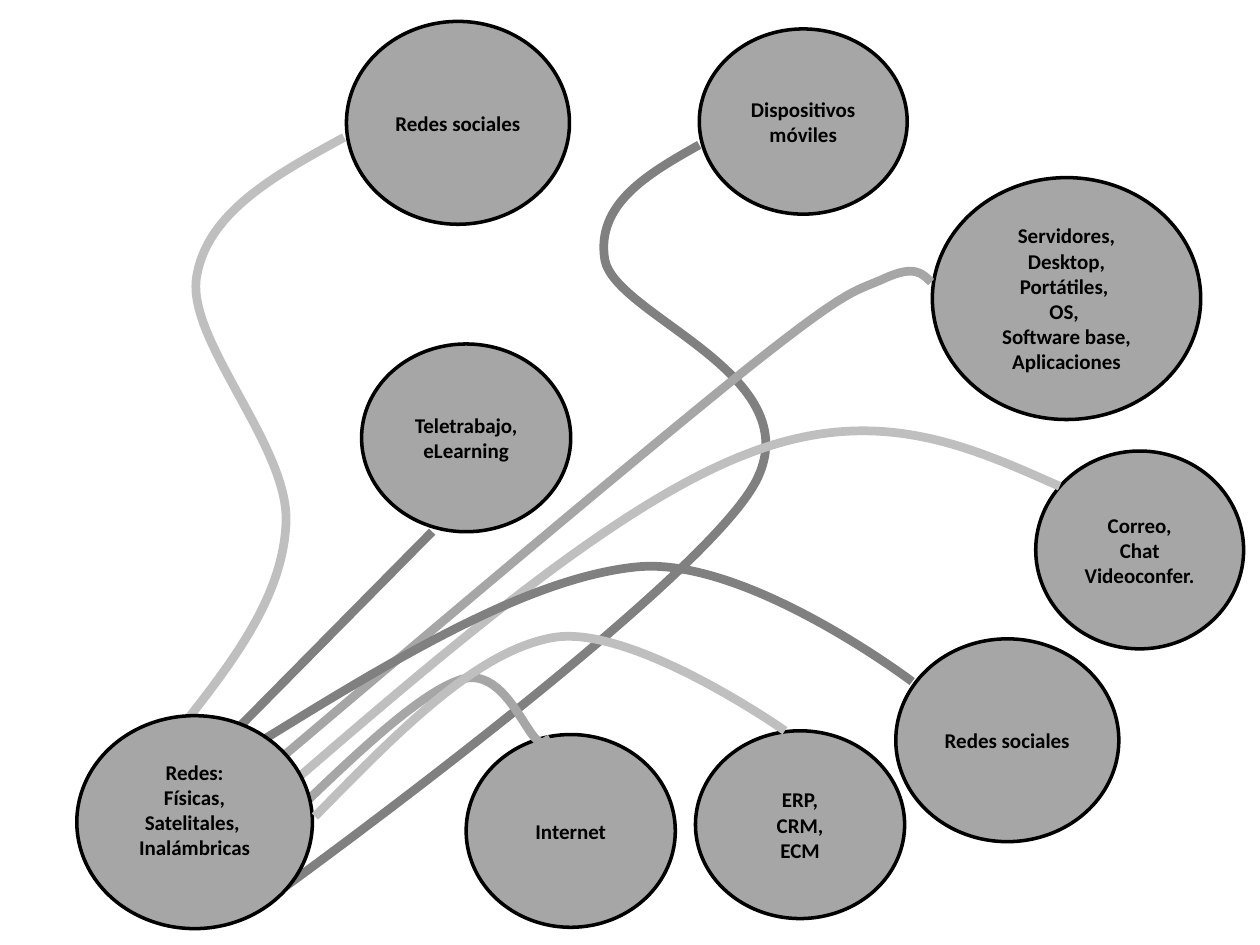
from lxml.etree import SubElement
from pptx import Presentation
from pptx.dml.color import RGBColor
from pptx.enum.shapes import MSO_SHAPE
from pptx.enum.text import MSO_ANCHOR, PP_ALIGN
from pptx.oxml.ns import qn
from pptx.util import Inches, Pt

presentation = Presentation()
presentation.slide_width, presentation.slide_height = Inches(10), Inches(7.5)
slide = presentation.slides.add_slide(presentation.slide_layouts[6])

# Grid of 1000 columns by 750 rows; cells are square
CELL = presentation.slide_width // 1000
DARK, MEDIUM, LIGHT = "808080", "A6A6A6", "BFBFBF"
STEPS = 40


def paint(color_format, hex_color):
    color_format.rgb = RGBColor.from_string(hex_color)


def bezier(points, t):
    """Point at t on the cubic curve through four control points."""
    weights = ((1 - t) ** 3, 3 * t * (1 - t) ** 2, 3 * t * t * (1 - t), t ** 3)
    return tuple(round(sum(w * p[axis] for w, p in zip(weights, points)))
                 for axis in (0, 1))


# Nodes: (left, top, width, height), paragraphs
# Links: colour, start point followed by three points per curve
# Listed from back to front
parts = [
    ((740, 141, 213, 192), ["Servidores, Desktop, Portátiles, ", "OS, ",
                            "Software base, Aplicaciones"]),
    ((822, 358, 165, 157), ["Correo,", "Chat", "Videoconfer."]),
    ((370, 583, 166, 153), ["Internet"]),
    ((287, 273, 166, 149), ["Teletrabajo,", "eLearning"]),
    ((555, 23, 165, 147), ["Dispositivos móviles"]),
    ((275, 17, 177, 161), ["Redes sociales"]),
    (DARK, [(179, 588), (179, 588), (343, 422), (343, 422)]),
    (DARK, [(555, 115), (514, 138), (473, 162), (480, 206),
            (488, 251), (644, 297), (600, 382),
            (556, 466), (215, 712), (215, 712)]),
    (MEDIUM, [(739, 224), (732, 217), (726, 210), (702, 221),
              (678, 232), (677, 226), (595, 291),
              (514, 356), (363, 483), (212, 611)]),
    ((711, 507, 177, 161), ["Redes sociales"]),
    (LIGHT, [(223, 629), (355, 515), (488, 401), (591, 361),
             (694, 320), (767, 353), (841, 386)]),
    (LIGHT, [(144, 577), (185, 525), (225, 473), (227, 414),
             (229, 354), (148, 270), (156, 220),
             (164, 169), (218, 139), (273, 109)]),
    (DARK, [(198, 594), (308, 526), (417, 459), (505, 450),
            (592, 441), (724, 541), (724, 541)]),
    (MEDIUM, [(232, 647), (283, 598), (334, 549), (367, 539),
              (399, 530), (416, 580), (427, 588),
              (438, 595), (435, 590), (432, 585)]),
    ((552, 580, 166, 149), ["ERP,", "CRM,", "ECM"]),
    ((61, 568, 187, 169), ["Redes:", "Físicas,", "Satelitales, ", "Inalámbricas"]),
    (LIGHT, [(250, 648), (314, 583), (377, 517), (439, 506),
             (502, 495), (623, 580), (623, 580)]),
]

for place, content in parts:
    # Circles with centred text
    if isinstance(place, tuple):
        node = slide.shapes.add_shape(MSO_SHAPE.OVAL, *(n * CELL for n in place))
        node.shadow.inherit = False
        node.fill.solid()
        paint(node.fill.fore_color, MEDIUM)
        paint(node.line.color, "000000")
        node.line.width = Pt(2)
        frame = node.text_frame
        frame.word_wrap = True
        frame.vertical_anchor = MSO_ANCHOR.MIDDLE
        if len(content) == 4:  # the hub's text sits one line higher
            frame.margin_bottom = Inches(0.25)
        frame.text = "\n".join(content)
        for paragraph in frame.paragraphs:
            paragraph.alignment = PP_ALIGN.CENTER
            paragraph.font.name = "Calibri"
            paragraph.font.size = Pt(12)
            paragraph.font.bold = True
            paint(paragraph.font.color, "000000")
        continue

    # Links: trace the curves to get a tight frame
    points = [(x * CELL, y * CELL) for x, y in content]
    curves = [points[i:i + 4] for i in range(0, len(points) - 1, 3)]
    builder = slide.shapes.build_freeform(*points[0], scale=1.0)
    builder.add_line_segments(
        [bezier(curve, step / STEPS) for curve in curves
         for step in range(1, STEPS + 1)], close=False)
    link = builder.convert_to_shape()
    link.shadow.inherit = False
    link.fill.background()
    paint(link.line.color, place)
    link.line.width = Pt(5)

    # Swap the traced segments for true Bézier curves
    outline = next(link.element.iter(qn("a:path")))
    for segment in outline.findall(qn("a:lnTo")):
        outline.remove(segment)
    for curve in curves:
        cubic = SubElement(outline, qn("a:cubicBezTo"))
        for x, y in curve[1:]:
            SubElement(cubic, qn("a:pt"), x=str(x - link.left), y=str(y - link.top))

presentation.save("out.pptx")
